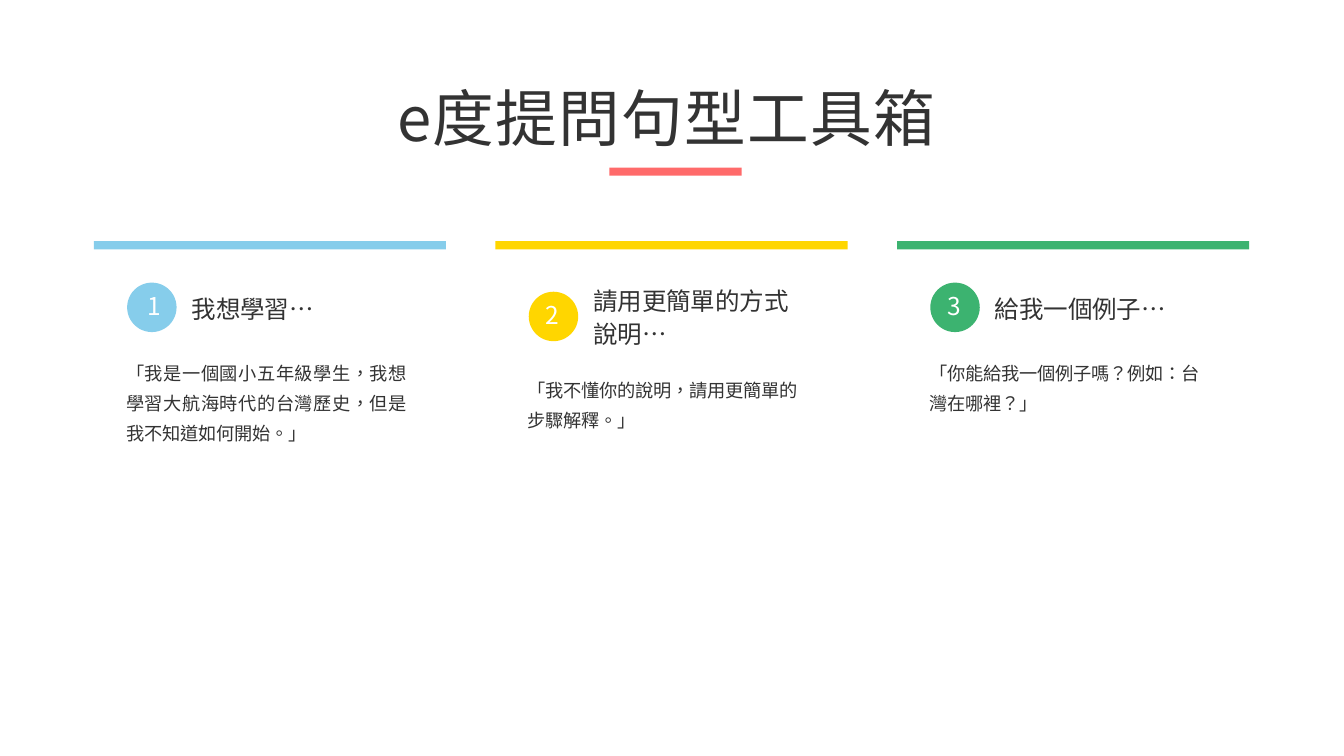
from dataclasses import dataclass

from lxml import etree
from pptx import Presentation
from pptx.dml.color import RGBColor
from pptx.enum import shapes, text
from pptx.oxml import ns
from pptx.util import Inches, Pt

FONT = "Noto Sans CJK TC"
WHITE = RGBColor(0xFF, 0xFF, 0xFF)
DARK = RGBColor(0x33, 0x33, 0x33)
CORAL = RGBColor(0xFF, 0x6A, 0x6A)
SKY = RGBColor(0x86, 0xCD, 0xEB)
YELLOW = RGBColor(0xFF, 0xD6, 0x00)
GREEN = RGBColor(0x3C, 0xB3, 0x70)

COLUMN_LEFT, COLUMN_TOP, COLUMN_WIDTH, COLUMN_PITCH = 0.93, 2.39, 3.49, 3.98
BAR_HEIGHT = 0.08
BADGE_SIZE = 0.49


@dataclass
class Prompt:
    """One sentence pattern, with offsets from the top of its column."""
    color: RGBColor
    heading: str
    example: str
    badge_top: float = 0.41
    number_left: float = 0.16
    heading_top: float = 0.5
    heading_width: float = 1.99
    heading_height: float = 0.32
    heading_spacing: float = 1.0
    example_top: float = 1.1
    example_height: float = 0.62
    example_align: text.PP_ALIGN = text.PP_ALIGN.LEFT


PROMPTS = [
    Prompt(SKY, "我想學習…",
           "「我是一個國小五年級學生，我想學習大航海時代的台灣歷史，但是我不知道如何開始。」",
           number_left=0.19, example_height=0.92,
           example_align=text.PP_ALIGN.JUSTIFY),
    Prompt(YELLOW, "請用更簡單的方式說明…",
           "「我不懂你的說明，請用更簡單的步驟解釋。」",
           badge_top=0.5, heading_top=0.39, heading_height=0.68,
           heading_spacing=1.12, example_top=1.27),
    Prompt(GREEN, "給我一個例子…", "「你能給我一個例子嗎？例如：台灣在哪裡？」"),
]


def add_filled(slide, kind, box, color):
    """Add a plain shape with a solid fill."""
    shape = slide.shapes.add_shape(kind, *map(Inches, box))
    shape.shadow.inherit = False
    shape.fill.solid()
    shape.fill.fore_color.rgb = color
    shape.line.fill.background()


def add_text(slide, box, words, size, color=DARK, tracking=-10, **paragraph_format):
    """Add a one-paragraph text box; tracking is in hundredths of a point."""
    frame = slide.shapes.add_textbox(*map(Inches, box)).text_frame
    frame_format = {"word_wrap": True, "margin_left": Inches(0.01),
                    "margin_top": Inches(0.02), "margin_right": 0, "margin_bottom": 0}
    for name, value in frame_format.items():
        setattr(frame, name, value)
    paragraph = frame.paragraphs[0]
    for name, value in {"space_before": Pt(1), **paragraph_format}.items():
        setattr(paragraph, name, value)
    run = paragraph.add_run()
    run.text = words
    for name, value in {"name": FONT, "size": Pt(size)}.items():
        setattr(run.font, name, value)
    run.font.color.rgb = color
    properties = run._r.get_or_add_rPr()
    properties.set("lang", "zh-TW")
    properties.set("spc", str(tracking))
    etree.SubElement(properties, ns.qn("a:ea"), typeface=FONT)


def add_title(slide, left, top, width):
    """Place the title and the short bar centred beneath it."""
    bar_width = 1.31
    bar_left = left + (width - bar_width) / 2
    add_filled(slide, shapes.MSO_SHAPE.RECTANGLE,
               (bar_left, top + 0.89, bar_width, BAR_HEIGHT), CORAL)
    add_text(slide, (left, top, width, 0.76), "e度提問句型工具箱", 44, tracking=90)


def add_prompt(slide, left, top, width, number, prompt):
    """Place one column: colour bar, numbered badge, heading and example."""
    badge_left, badge_top = left + 0.33, top + prompt.badge_top
    add_filled(slide, shapes.MSO_SHAPE.RECTANGLE,
               (left, top, width, BAR_HEIGHT), prompt.color)
    add_filled(slide, shapes.MSO_SHAPE.OVAL,
               (badge_left, badge_top, BADGE_SIZE, BADGE_SIZE), prompt.color)
    add_text(slide, (badge_left + prompt.number_left, badge_top + 0.06, 0.17, 0.32),
             str(number), 17.5, WHITE, tracking=-50)
    add_text(slide, (left + 0.96, top + prompt.heading_top,
                     prompt.heading_width, prompt.heading_height),
             prompt.heading, 17.5, line_spacing=prompt.heading_spacing)
    add_text(slide, (left + 0.31, top + prompt.example_top, 2.79, prompt.example_height),
             prompt.example, 13, line_spacing=1.37, alignment=prompt.example_align)


def main():
    """Build the slide and save the presentation."""
    presentation = Presentation()
    presentation.slide_width = Inches(13.32)
    presentation.slide_height = Inches(7.49)
    slide = presentation.slides.add_slide(presentation.slide_layouts[6])
    add_title(slide, 3.93, 0.77, 5.53)
    for index, prompt in enumerate(PROMPTS):
        add_prompt(slide, COLUMN_LEFT + index * COLUMN_PITCH, COLUMN_TOP,
                   COLUMN_WIDTH, index + 1, prompt)
    presentation.save("out.pptx")


if __name__ == "__main__":
    main()
